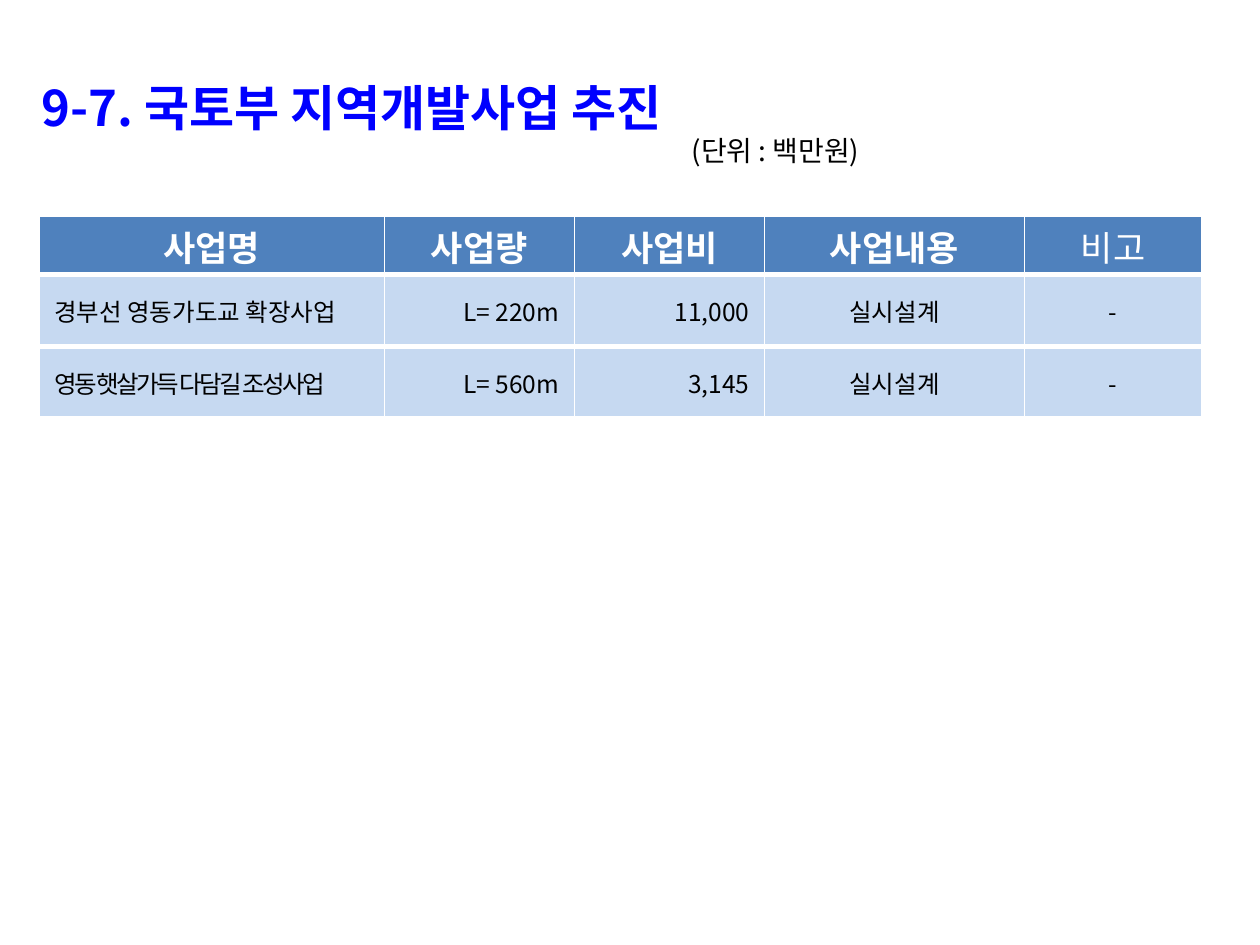
from dataclasses import dataclass

from lxml import etree
from pptx import Presentation
from pptx.dml.color import RGBColor
from pptx.enum.text import MSO_ANCHOR, MSO_AUTO_SIZE, PP_ALIGN
from pptx.oxml.ns import qn
from pptx.util import Inches, Pt

LEFT, CENTER, RIGHT = PP_ALIGN.LEFT, PP_ALIGN.CENTER, PP_ALIGN.RIGHT
TOP, MIDDLE = MSO_ANCHOR.TOP, MSO_ANCHOR.MIDDLE
NO_AUTOFIT = MSO_AUTO_SIZE.NONE
TITLE_ONLY_LAYOUT = 5


@dataclass(frozen=True)
class Theme:
    font: str = "Noto Sans CJK KR"
    title: str = "0000FF"
    text: str = "000000"
    white: str = "FFFFFF"
    header_fill: str = "4F81BD"
    body_fill: str = "C6D9F1"
    title_size: int = 28
    header_size: int = 20
    unit_size: int = 16
    body_size: int = 14
    thin_border: int = 1
    thick_border: int = 3


HEADERS = ["사업명", "사업량", "사업비", "사업내용", "비고"]
PROJECTS = [
    ["경부선 영동가도교 확장사업", "L= 220m", "11,000", "실시설계", "-"],
    ["영동 햇살가득 다담길 조성사업", "L= 560m", "3,145", "실시설계", "-"],
]
ALIGNMENTS = [LEFT, RIGHT, RIGHT, CENTER, CENTER]
COLUMN_WIDTHS = [2.74, 1.51, 1.51, 2.06, 1.41]
ROW_HEIGHTS = [0.46, 0.57, 0.57]
TIGHT_PROJECT = PROJECTS[1][0]


class SlideBuilder:
    def __init__(self, slide, theme):
        self.slide = slide
        self.theme = theme

    def set_text(self, paragraph, text, size, color, bold=False, align=LEFT, spacing=0):
        """Fill a paragraph; spacing is the gap between letters in points."""
        paragraph.text = text
        paragraph.alignment = align
        font = paragraph.font
        font.size, font.bold, font.name = Pt(size), bold, self.theme.font
        font.color.rgb = RGBColor.from_string(color)
        properties = paragraph._p.get_or_add_pPr().find(qn("a:defRPr"))
        etree.SubElement(properties, qn("a:ea"), typeface=self.theme.font)
        if spacing:
            properties.set("spc", str(int(spacing * 100)))

    def title(self, text, unit):
        theme = self.theme
        shape = self.slide.shapes.title
        shape.left, shape.top = Inches(0.23), Inches(0.62)
        shape.width, shape.height = Inches(9.45), Inches(0.9)
        frame = shape.text_frame
        frame.word_wrap = True
        frame.auto_size = NO_AUTOFIT
        frame.vertical_anchor = TOP
        heading, note = frame.paragraphs[0], frame.add_paragraph()
        note._p.get_or_add_pPr().set("marL", str(Inches(5.16)))
        self.set_text(heading, text, theme.title_size, theme.title, bold=True)
        self.set_text(note, unit, theme.unit_size, theme.text)
        for paragraph in (heading, note):
            paragraph.line_spacing = 0.9
            paragraph.space_before = Pt(0)

    def borders(self, cell, top):
        theme = self.theme
        properties = cell._tc.get_or_add_tcPr()
        widths = {"lnL": theme.thin_border, "lnR": theme.thin_border,
                  "lnT": top, "lnB": theme.thick_border}
        for position, (side, width) in enumerate(widths.items()):
            line = etree.Element(qn(f"a:{side}"), w=str(Pt(width)))
            fill = etree.SubElement(line, qn("a:solidFill"))
            etree.SubElement(fill, qn("a:srgbClr"), val=theme.white)
            properties.insert(position, line)

    def cell(self, cell, fill, margins, top_border, text, **style):
        cell.fill.solid()
        cell.fill.fore_color.rgb = RGBColor.from_string(fill)
        cell.vertical_anchor = MIDDLE
        horizontal, vertical = margins
        cell.margin_left = cell.margin_right = Inches(horizontal)
        cell.margin_top = cell.margin_bottom = Inches(vertical)
        self.borders(cell, top_border)
        self.set_text(cell.text_frame.paragraphs[0], text, **style)

    def project_table(self):
        theme = self.theme
        table = self.slide.shapes.add_table(
            len(ROW_HEIGHTS), len(COLUMN_WIDTHS), Inches(0.31), Inches(1.72),
            Inches(sum(COLUMN_WIDTHS)), Inches(sum(ROW_HEIGHTS))).table
        for column, width in zip(table.columns, COLUMN_WIDTHS):
            column.width = Inches(width)
        for row, height in zip(table.rows, ROW_HEIGHTS):
            row.height = Inches(height)
        for column, text in enumerate(HEADERS):
            self.cell(table.cell(0, column), theme.header_fill, (0, 0),
                      theme.thin_border, text, size=theme.header_size,
                      color=theme.white, bold=text != "비고", align=CENTER)
        for row, project in enumerate(PROJECTS, start=1):
            for column, text in enumerate(project):
                self.cell(table.cell(row, column), theme.body_fill, (0.12, 0.05),
                          theme.thick_border, text, size=theme.body_size,
                          color=theme.text, align=ALIGNMENTS[column],
                          spacing=-1.5 if text == TIGHT_PROJECT else 0)


def main():
    presentation = Presentation()
    presentation.slide_width, presentation.slide_height = Inches(10), Inches(7.5)
    slide = presentation.slides.add_slide(presentation.slide_layouts[TITLE_ONLY_LAYOUT])
    builder = SlideBuilder(slide, Theme())
    builder.title("9-7. 국토부 지역개발사업 추진", "(단위 : 백만원)")
    builder.project_table()
    presentation.save("out.pptx")


if __name__ == "__main__":
    main()
